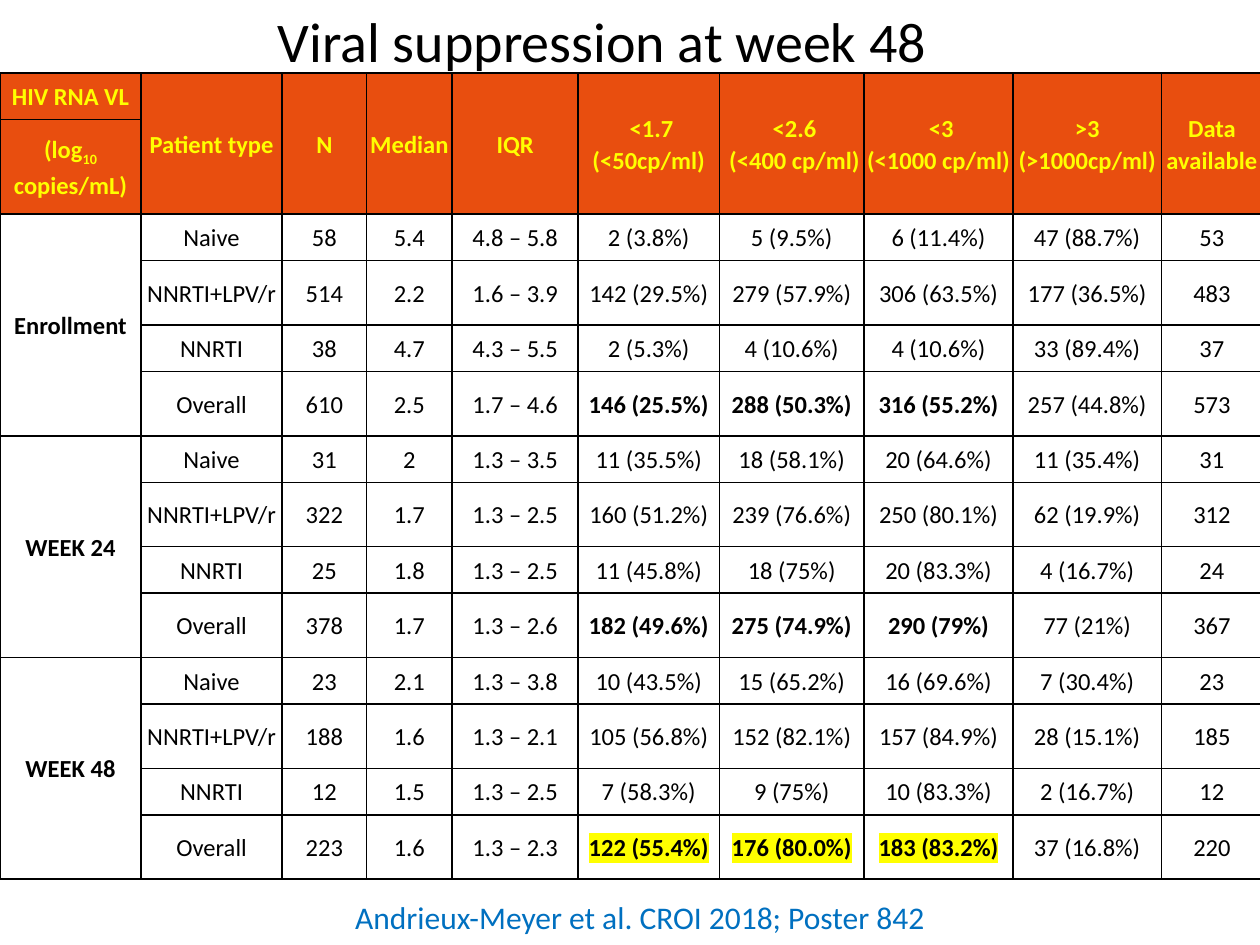
"""Build the slide that tabulates viral suppression at week 48."""
from dataclasses import dataclass

from lxml import etree
from pptx import Presentation
from pptx.dml.color import RGBColor
from pptx.enum.text import MSO_ANCHOR, MSO_AUTO_SIZE, PP_ALIGN
from pptx.oxml.ns import qn
from pptx.util import Inches, Pt

BLACK = RGBColor(0x00, 0x00, 0x00)
YELLOW = RGBColor(0xFF, 0xFF, 0x00)
ORANGE = RGBColor(0xE8, 0x4E, 0x0F)
BLUE = RGBColor(0x00, 0x70, 0xC0)
CENTER = PP_ALIGN.CENTER
MIDDLE = MSO_ANCHOR.MIDDLE
TOP = MSO_ANCHOR.TOP
NO_AUTOFIT = MSO_AUTO_SIZE.NONE
FONT = "Calibri"

COLUMN_WIDTHS = [1.12, 1.12, 0.67, 0.68, 1, 1.12, 1.15, 1.18, 1.18, 0.8]
HEADER_HEIGHTS = [0.37, 0.75]
GROUP_HEIGHTS = [0.37, 0.51, 0.37, 0.51]
HEADER_ROWS = len(HEADER_HEIGHTS)
GROUP_ROWS = len(GROUP_HEIGHTS)
EMPHASIS_COLUMNS = range(5, 8)
HEADERS = ["HIV RNA VL", "Patient type", "N", "Median", "IQR", " <1.7 (<50cp/ml)",
           " <2.6\n (<400 cp/ml)", " <3\n(<1000 cp/ml)", ">3\n(>1000cp/ml)",
           "Data available"]


@dataclass(frozen=True)
class Visit:
    name: str
    patients: list[list[str]]
    highlighted: bool = False


VISITS = [
    Visit("Enrollment", [
        ["Naive", "58", "5.4", "4.8 – 5.8", "2 (3.8%)", "5 (9.5%)", "6 (11.4%)", "47 (88.7%)", "53"],
        ["NNRTI+LPV/r", "514", "2.2", "1.6 – 3.9", "142 (29.5%)", "279 (57.9%)", "306 (63.5%)", "177 (36.5%)", "483"],
        ["NNRTI", "38", "4.7", "4.3 – 5.5", "2 (5.3%)", "4 (10.6%)", "4 (10.6%)", "33 (89.4%)", "37"],
        ["Overall", "610", "2.5", "1.7 – 4.6", "146 (25.5%)", "288 (50.3%)", "316 (55.2%)", "257 (44.8%)", "573"],
    ]),
    Visit("WEEK 24", [
        ["Naive", "31", "2", "1.3 – 3.5", "11 (35.5%)", "18 (58.1%)", "20 (64.6%)", "11 (35.4%)", "31"],
        ["NNRTI+LPV/r", "322", "1.7", "1.3 – 2.5", "160 (51.2%)", "239 (76.6%)", "250 (80.1%)", "62 (19.9%)", "312"],
        ["NNRTI", "25", "1.8", "1.3 – 2.5", "11 (45.8%)", "18 (75%)", "20 (83.3%)", "4 (16.7%)", "24"],
        ["Overall", "378", "1.7", "1.3 – 2.6", "182 (49.6%)", "275 (74.9%)", "290 (79%)", "77 (21%)", "367"],
    ]),
    Visit("WEEK 48", [
        ["Naive", "23", "2.1", "1.3 – 3.8", "10 (43.5%)", "15 (65.2%)", "16 (69.6%)", "7 (30.4%)", "23"],
        ["NNRTI+LPV/r", "188", "1.6", "1.3 – 2.1", "105 (56.8%)", "152 (82.1%)", "157 (84.9%)", "28 (15.1%)", "185"],
        ["NNRTI", "12", "1.5", "1.3 – 2.5", "7 (58.3%)", "9 (75%)", "10 (83.3%)", "2 (16.7%)", "12"],
        ["Overall", "223", "1.6", "1.3 – 2.3", "122 (55.4%)", "176 (80.0%)", "183 (83.2%)", "37 (16.8%)", "220"],
    ], highlighted=True),
]


def style_paragraph(paragraph, size: float, color: RGBColor, bold: bool = False) -> None:
    paragraph.alignment = CENTER
    font = paragraph.font
    font.name, font.size, font.bold = FONT, Pt(size), bold
    font.color.rgb = color


def add_borders(cell) -> None:
    properties = cell._tc.get_or_add_tcPr()
    for position, side in enumerate(("lnL", "lnR", "lnT", "lnB")):
        line = etree.Element(qn(f"a:{side}"), w=str(Pt(1)))
        fill = etree.SubElement(line, qn("a:solidFill"))
        etree.SubElement(fill, qn("a:srgbClr"), val=str(BLACK))
        properties.insert(position, line)


def highlight(run) -> None:
    marker = etree.SubElement(run._r.get_or_add_rPr(), qn("a:highlight"))
    etree.SubElement(marker, qn("a:srgbClr"), val=str(YELLOW))


def style_cell(cell, header: bool, bold: bool) -> None:
    cell.margin_left = cell.margin_right = cell.margin_top = cell.margin_bottom = 0
    cell.vertical_anchor = MIDDLE
    if header:
        cell.fill.solid()
        cell.fill.fore_color.rgb = ORANGE
    else:
        cell.fill.background()
    add_borders(cell)
    for paragraph in cell.text_frame.paragraphs:
        paragraph.line_spacing = 1.07
        style_paragraph(paragraph, 14, YELLOW if header else BLACK, bold)


def fill_headers(table) -> None:
    for column, heading in enumerate(HEADERS):
        table.cell(0, column).text = heading
        if column:
            table.cell(0, column).merge(table.cell(HEADER_ROWS - 1, column))
    unit = table.cell(1, 0).text_frame.paragraphs[0]
    for part in ("(log", "10", " copies/mL)"):
        run = unit.add_run()
        run.text = part
        if part == "10":
            run._r.get_or_add_rPr().set("baseline", "-25000")


def fill_visit(table, visit: Visit, first_row: int) -> None:
    table.cell(first_row, 0).text = visit.name
    table.cell(first_row, 0).merge(table.cell(first_row + GROUP_ROWS - 1, 0))
    for row, values in enumerate(visit.patients, first_row):
        for column, value in enumerate(values, 1):
            table.cell(row, column).text = value
    if visit.highlighted:
        for column in EMPHASIS_COLUMNS:
            overall = table.cell(first_row + GROUP_ROWS - 1, column)
            highlight(overall.text_frame.paragraphs[0].runs[0])


def add_results(slide) -> None:
    heights = HEADER_HEIGHTS + GROUP_HEIGHTS * len(VISITS)
    table = slide.shapes.add_table(
        len(heights), len(COLUMN_WIDTHS), 0, Inches(0.58),
        Inches(sum(COLUMN_WIDTHS)), Inches(sum(heights))).table
    table.first_row = table.horz_banding = False
    for column, width in zip(table.columns, COLUMN_WIDTHS):
        column.width = Inches(width)
    for row, height in zip(table.rows, heights):
        row.height = Inches(height)
    fill_headers(table)
    for index, visit in enumerate(VISITS):
        fill_visit(table, visit, HEADER_ROWS + index * GROUP_ROWS)
    for row in range(len(heights)):
        header = row < HEADER_ROWS
        overall = not header and (row - HEADER_ROWS) % GROUP_ROWS == GROUP_ROWS - 1
        for column in range(len(COLUMN_WIDTHS)):
            bold = header or column == 0 or (overall and column in EMPHASIS_COLUMNS)
            style_cell(table.cell(row, column), header, bold)


def main() -> None:
    presentation = Presentation()
    presentation.slide_width, presentation.slide_height = Inches(10), Inches(7.5)
    slide = presentation.slides.add_slide(presentation.slide_layouts[5])

    title = slide.shapes.title
    title.left, title.top = Inches(0.33), 0
    title.width, title.height = Inches(9), Inches(0.61)
    title.text_frame.text = "Viral suppression at week 48 "
    title.text_frame.auto_size = NO_AUTOFIT
    title.text_frame.vertical_anchor = TOP
    style_paragraph(title.text_frame.paragraphs[0], 32, BLACK)

    add_results(slide)

    citation = slide.shapes.add_textbox(Inches(1.08), Inches(7.08), Inches(8), Inches(0.4))
    citation.text_frame.word_wrap = True
    citation.text_frame.text = "Andrieux-Meyer et al. CROI 2018; Poster 842"
    style_paragraph(citation.text_frame.paragraphs[0], 18, BLUE)
    presentation.save("out.pptx")


if __name__ == "__main__":
    main()
